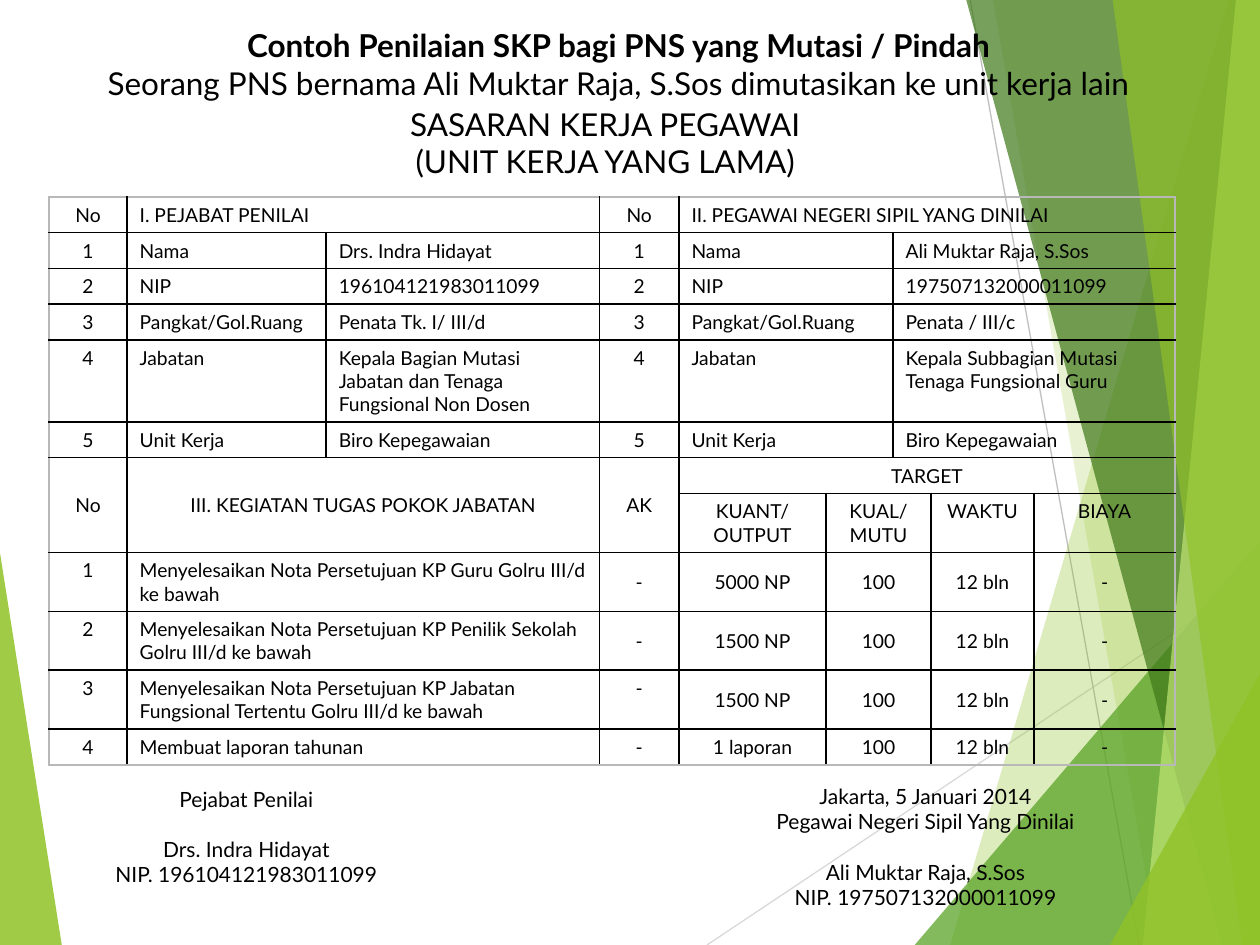
from lxml import etree
from pptx import Presentation
from pptx.dml.color import RGBColor
from pptx.enum.shapes import MSO_CONNECTOR
from pptx.enum.text import MSO_ANCHOR, MSO_AUTO_SIZE, PP_ALIGN
from pptx.oxml.ns import qn
from pptx.util import Pt

LEFT, CENTER = PP_ALIGN.LEFT, PP_ALIGN.CENTER
TOP, MIDDLE = MSO_ANCHOR.TOP, MSO_ANCHOR.MIDDLE
GROW, STRAIGHT = MSO_AUTO_SIZE.SHAPE_TO_FIT_TEXT, MSO_CONNECTOR.STRAIGHT

BLACK = RGBColor(0x00, 0x00, 0x00)
FRAME_GRAY = RGBColor(0xB8, 0xB8, 0xB8)
RAY_GRAY = RGBColor(0xD9, 0xD9, 0xD9)
RAY_DARK = RGBColor(0xBF, 0xBF, 0xBF)
LIME = RGBColor(0x90, 0xC2, 0x26)
GREEN = RGBColor(0x54, 0xA0, 0x21)
FOREST = RGBColor(0x3F, 0x78, 0x19)
PALE = RGBColor(0xC0, 0xE4, 0x74)

WIDTH, HEIGHT = 720, 540
LINE_HEIGHT, CELL_PADDING = 13.2, 7.2


class SlideBuilder:
    def __init__(self, slide, font="Lato"):
        self.slide = slide
        self.shapes = slide.shapes
        self.font = font

    def set_lines(self, frame, lines, size, align=CENTER, bold_first=False, gap_at=None):
        frame.text = "\n".join(lines)
        for index, paragraph in enumerate(frame.paragraphs):
            layout = {"alignment": align, "line_spacing": 1.0,
                      "space_before": Pt(size * 1.2 if index == gap_at else 0)}
            for name, value in layout.items():
                setattr(paragraph, name, value)
            style = {"name": self.font, "size": Pt(size),
                     "bold": bold_first and index == 0}
            for run in paragraph.runs:
                for name, value in style.items():
                    setattr(run.font, name, value)
                run.font.color.rgb = BLACK

    def place(self, shape, box, lines, size, **options):
        for name, value in zip(("left", "top", "width", "height"), box):
            setattr(shape, name, Pt(value))
        frame = shape.text_frame
        for name, value in {"word_wrap": True, "auto_size": GROW,
                            "vertical_anchor": TOP}.items():
            setattr(frame, name, value)
        self.set_lines(frame, lines, size, **options)

    def title(self, box, lines, size):
        heading = self.shapes.title
        # Bring the heading in front of the decoration
        heading.element.getparent().append(heading.element)
        self.place(heading, box, lines, size, bold_first=True)

    def text(self, box, lines, size, **options):
        label = self.shapes.add_textbox(*map(Pt, box))
        self.place(label, box, lines, size, **options)

    def facet(self, points, color, opacity):
        corners = [(Pt(x), Pt(y)) for x, y in points]
        outline = self.shapes.build_freeform(*corners[0], scale=1.0)
        outline.add_line_segments(corners[1:], close=True)
        facet = outline.convert_to_shape()
        facet.shadow.inherit = False
        facet.fill.solid()
        facet.fill.fore_color.rgb = color
        facet.line.fill.background()
        tint = facet.element.spPr.find(qn("a:solidFill"))[0]
        etree.SubElement(tint, qn("a:alpha"), val=str(opacity * 1000))

    def ray(self, start, end, color):
        ray = self.shapes.add_connector(STRAIGHT, *map(Pt, start + end))
        ray.line.color.rgb = color
        ray.line.width = Pt(0.75)
        etree.SubElement(ray.element.spPr, qn("a:effectLst"))

    def table(self, left, top, widths, heights):
        frame = self.shapes.add_table(len(heights), len(widths), Pt(left), Pt(top),
                                      Pt(sum(widths)), Pt(sum(heights)))
        table = frame.table
        table.first_row = table.horz_banding = False
        for column, width in zip(table.columns, widths):
            column.width = Pt(width)
        for row, height in zip(table.rows, heights):
            row.height = Pt(height)
        return table

    def cell(self, table, row, col, text, cols=1, rows=1, align=CENTER, anchor=TOP):
        cell = table.cell(row, col)
        last_row, last_col = row + rows, col + cols
        if rows * cols > 1:
            cell.merge(table.cell(last_row - 1, last_col - 1))
        self.set_lines(cell.text_frame, text.split("\n"), 11, align=align)
        cell.vertical_anchor = anchor
        outer = {"lnL": col == 0, "lnR": last_col == len(table.columns),
                 "lnT": row == 0, "lnB": last_row == len(table.rows)}
        properties = cell._tc.get_or_add_tcPr()
        for edge, on_frame in outer.items():
            line = etree.SubElement(properties, qn(f"a:{edge}"), w=str(Pt(1)))
            paint = etree.SubElement(line, qn("a:solidFill"))
            etree.SubElement(paint, qn("a:srgbClr"),
                             val=str(FRAME_GRAY if on_frame else BLACK))
        cell.fill.background()


def draw_background(builder):
    def band(top_x, bottom_x):
        return [(top_x, 0), (bottom_x, HEIGHT), (WIDTH, HEIGHT), (WIDTH, 0)]

    def wedge(bottom_x, right_y):
        return [(bottom_x, HEIGHT), (WIDTH, right_y), (WIDTH, HEIGHT)]

    builder.facet([(0, 316), (35.3, HEIGHT), (0, HEIGHT)], LIME, 85)
    builder.ray((404, HEIGHT), (WIDTH, 329), RAY_GRAY)
    builder.ray((554.4, 0), (651, HEIGHT), RAY_DARK)
    for points, color, opacity in [
        (band(702, 543), LIME, 30),
        (band(567.4, 661.7), LIME, 20),
        (wedge(522.7, 309), GREEN, 72),
        (band(552.2, 698.4), FOREST, 70),
        (band(706.3, 653), PALE, 70),
        (band(635.8, 710), LIME, 65),
        (wedge(634.3, 385), LIME, 80),
    ]:
        builder.facet(points, color, opacity)


def draw_form(builder):
    people = [
        ("Nama", "Drs. Indra Hidayat", "Ali Muktar Raja, S.Sos"),
        ("NIP", "196104121983011099", "197507132000011099"),
        ("Pangkat/Gol.Ruang", "Penata Tk. I/ III/d", "Penata / III/c"),
        ("Jabatan", "Kepala Bagian Mutasi Jabatan dan Tenaga Fungsional Non Dosen",
         "Kepala Subbagian Mutasi Tenaga Fungsional Guru"),
        ("Unit Kerja", "Biro Kepegawaian", "Biro Kepegawaian"),
    ]
    # Task, output, anchor of the AK mark
    tasks = [
        ("Menyelesaikan Nota Persetujuan KP Guru Golru III/d ke bawah", "5000 NP", MIDDLE),
        ("Menyelesaikan Nota Persetujuan KP Penilik Sekolah Golru III/d ke bawah",
         "1500 NP", MIDDLE),
        ("Menyelesaikan Nota Persetujuan KP Jabatan Fungsional Tertentu Golru III/d ke bawah",
         "1500 NP", TOP),
        ("Membuat laporan tahunan", "1 laporan", TOP),
    ]
    widths = [44.6, 113.8, 156.2, 45.4, 84.2, 38.2, 21.6, 59, 80.6]
    line_counts = [1, 1, 1, 1, 3, 1, 1, 2, 2, 2, 2, 1]
    heights = [count * LINE_HEIGHT + CELL_PADDING for count in line_counts]
    form = builder.table(28, 112.5, widths, heights)

    def put(row, col, text, **options):
        builder.cell(form, row, col, text, **options)

    # Assessor and employee
    put(0, 0, "No")
    put(0, 1, "I. PEJABAT PENILAI", cols=2, align=LEFT)
    put(0, 3, "No")
    put(0, 4, "II. PEGAWAI NEGERI SIPIL YANG DINILAI", cols=5, align=LEFT)
    for row, (field, assessor, employee) in enumerate(people, 1):
        put(row, 0, str(row))
        put(row, 1, field, align=LEFT)
        put(row, 2, assessor, align=LEFT)
        put(row, 3, str(row))
        put(row, 4, field, cols=2, align=LEFT)
        put(row, 6, employee, cols=3, align=LEFT)

    # Task header
    put(6, 0, "No", rows=2, anchor=MIDDLE)
    put(6, 1, "III. KEGIATAN TUGAS POKOK JABATAN", cols=2, rows=2, anchor=MIDDLE)
    put(6, 3, "AK", rows=2, anchor=MIDDLE)
    put(6, 4, "TARGET", cols=5)
    put(7, 4, "KUANT/\nOUTPUT")
    put(7, 5, "KUAL/\nMUTU", cols=2)
    put(7, 7, "WAKTU")
    put(7, 8, "BIAYA")

    # Tasks and targets
    for number, (task, output, mark_anchor) in enumerate(tasks, 1):
        row = 7 + number
        put(row, 0, str(number))
        put(row, 1, task, cols=2, align=LEFT)
        put(row, 3, "-", anchor=mark_anchor)
        put(row, 4, output, anchor=MIDDLE)
        put(row, 5, "100", cols=2, anchor=MIDDLE)
        put(row, 7, "12 bln", anchor=MIDDLE)
        put(row, 8, "-", anchor=MIDDLE)


def main():
    deck = Presentation()
    deck.slide_width, deck.slide_height = Pt(WIDTH), Pt(HEIGHT)
    builder = SlideBuilder(deck.slides.add_slide(deck.slide_layouts[5]))
    draw_background(builder)

    # Headings
    builder.title((30.2, 11.5, 646.6, 72.7), [
        "Contoh Penilaian SKP bagi PNS yang Mutasi / Pindah",
        "Seorang PNS bernama Ali Muktar Raja, S.Sos dimutasikan ke unit kerja lain"], 18)
    builder.text((208, 56.2, 275.8, 72.7),
                 ["SASARAN KERJA PEGAWAI", "(UNIT KERJA YANG LAMA)"], 18)

    draw_form(builder)

    # Signatures
    builder.text((5.8, 445.7, 270, 94.3), [
        "Pejabat Penilai", "Drs. Indra Hidayat", "NIP. 196104121983011099"], 12, gap_at=1)
    builder.text((365.8, 444.2, 326.2, 101.5), [
        "Jakarta, 5 Januari 2014", "Pegawai Negeri Sipil Yang Dinilai",
        "Ali Muktar Raja, S.Sos", "NIP. 197507132000011099"], 12, gap_at=2)
    deck.save("out.pptx")


if __name__ == "__main__":
    main()
